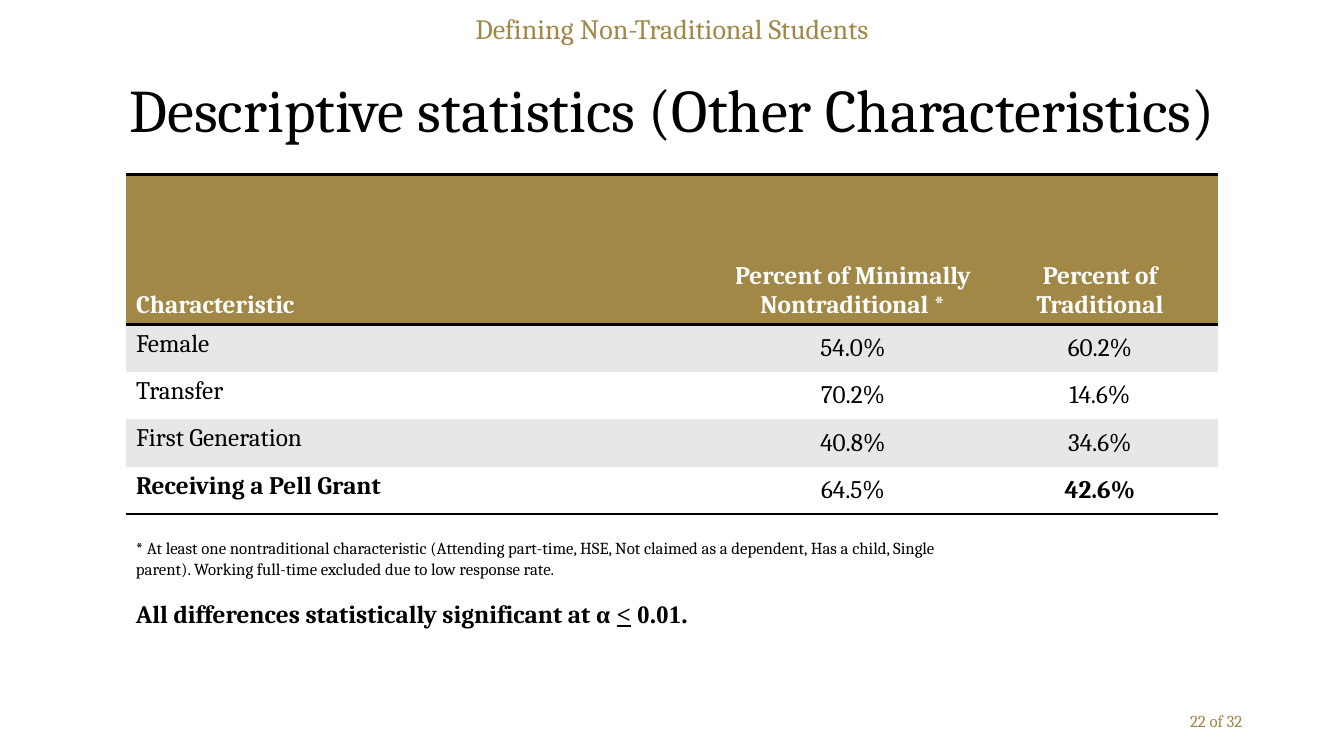
"""Build the slide of descriptive statistics on non-traditional students."""
from lxml import etree
from pptx import Presentation
from pptx.dml.color import RGBColor
from pptx.enum.text import MSO_ANCHOR, PP_ALIGN
from pptx.oxml import parse_xml
from pptx.oxml.ns import nsdecls, qn
from pptx.util import Inches, Pt

LEFT, CENTER, RIGHT = PP_ALIGN.LEFT, PP_ALIGN.CENTER, PP_ALIGN.RIGHT
TOP, MIDDLE, BOTTOM = MSO_ANCHOR.TOP, MSO_ANCHOR.MIDDLE, MSO_ANCHOR.BOTTOM
COLORS = {"gold": "A18846", "black": "000000", "white": "FFFFFF", "band": "E7E7E7"}
FONT = "Cambria"
NO_STYLE = "{2D5ABB26-0587-4C30-8999-92F81FD0307C}"


def add_run(paragraph, text, size, color="black", bold=False, font=FONT):
    run = paragraph.add_run()
    run.text = text
    run.font.name = font
    run.font.size = Pt(size)
    run.font.bold = bold
    run.font.color.rgb = RGBColor.from_string(COLORS[color])
    return run


def add_border(cell, side):
    line = parse_xml(
        f'<a:{side} {nsdecls("a")} w="{Pt(2)}"><a:solidFill>'
        f'<a:srgbClr val="{COLORS["black"]}"/></a:solidFill></a:{side}>'
    )
    cell._tc.get_or_add_tcPr().insert(0, line)


presentation = Presentation()
presentation.slide_width = Inches(13.33)
presentation.slide_height = Inches(7.5)
slide = presentation.slides.add_slide(presentation.slide_layouts[1])

title = slide.shapes.title
title.left, title.top = Inches(0.64), Inches(0.4)
title.width, title.height = Inches(12.05), Inches(1.45)
title.text_frame.vertical_anchor = MIDDLE
paragraph = title.text_frame.paragraphs[0]
paragraph.alignment = CENTER
paragraph.line_spacing = 0.9
add_run(paragraph, "Descriptive statistics (Other Characteristics)", 43.2)

section = slide.placeholders[1]
section.left, section.top = Inches(0), Inches(0.13)
section.width, section.height = Inches(13.33), Inches(0.4)
section.text_frame.vertical_anchor = TOP
paragraph = section.text_frame.paragraphs[0]
properties = paragraph._p.get_or_add_pPr()
properties.set("marL", "0")
properties.set("indent", "0")
etree.SubElement(properties, qn("a:buNone"))
paragraph.alignment = CENTER
paragraph.line_spacing = 0.8
paragraph.space_before = Pt(0)
add_run(paragraph, "Defining Non-Traditional Students", 20, "gold")

page = slide.shapes.add_textbox(Inches(9.42), Inches(6.95), Inches(3), Inches(0.4))
page.text_frame.word_wrap = True
page.text_frame.vertical_anchor = MIDDLE
paragraph = page.text_frame.paragraphs[0]
paragraph.alignment = RIGHT
add_run(paragraph, "22 of 32", 12, "gold")

rows = [
    ("Characteristic", "Percent of Minimally Nontraditional *", "Percent of Traditional"),
    ("Female", "54.0%", "60.2%"),
    ("Transfer", "70.2%", "14.6%"),
    ("First Generation", "40.8%", "34.6%"),
    ("Receiving a Pell Grant", "64.5%", "42.6%"),
]
last_row = len(rows) - 1
bold_cells = {(last_row, 0), (last_row, 2)}
table_frame = slide.shapes.add_table(
    len(rows), 3, Inches(1.25), Inches(1.73), Inches(10.83), Inches(3.37)
)
table = table_frame.table
table.horz_banding = False
table.first_row = True
table._tbl.tblPr.find(qn("a:tableStyleId")).text = NO_STYLE
for column, width in zip(table.columns, (5.93, 2.56, 2.34)):
    column.width = Inches(width)

for row_index, values in enumerate(rows):
    header = row_index == 0
    table.rows[row_index].height = Inches(1.49 if header else 0.47)
    fill = "gold" if header else "band" if row_index % 2 else "white"
    for column_index, value in enumerate(values):
        cell = table.cell(row_index, column_index)
        cell.fill.solid()
        cell.fill.fore_color.rgb = RGBColor.from_string(COLORS[fill])
        cell.vertical_anchor = BOTTOM if header else MIDDLE if column_index else TOP
        paragraph = cell.text_frame.paragraphs[0]
        paragraph.alignment = CENTER if column_index else LEFT
        bold = header or (row_index, column_index) in bold_cells
        add_run(paragraph, value, 18, "white" if header else "black", bold)
        if row_index in (0, last_row):
            add_border(cell, "lnB")
        if header:
            add_border(cell, "lnT")

notes = slide.shapes.add_textbox(Inches(1.25), Inches(5.29), Inches(8.38), Inches(1.01))
notes.text_frame.word_wrap = True
paragraph = notes.text_frame.paragraphs[0]
add_run(
    paragraph,
    "* At least one nontraditional characteristic (Attending part-time, HSE, "
    "Not claimed as a dependent, Has a child, Single parent). "
    "Working full-time excluded due to low response rate.",
    12,
)
paragraph = notes.text_frame.add_paragraph()
paragraph.space_before = Pt(14)
add_run(paragraph, "All differences statistically significant at ", 18, bold=True)
add_run(paragraph, "α ", 18, bold=True, font="Times New Roman")
sign = add_run(paragraph, "<", 18, bold=True, font="Times New Roman")
sign.font.underline = True
add_run(paragraph, " 0.01.", 18, bold=True, font="Times New Roman")

presentation.save("out.pptx")
